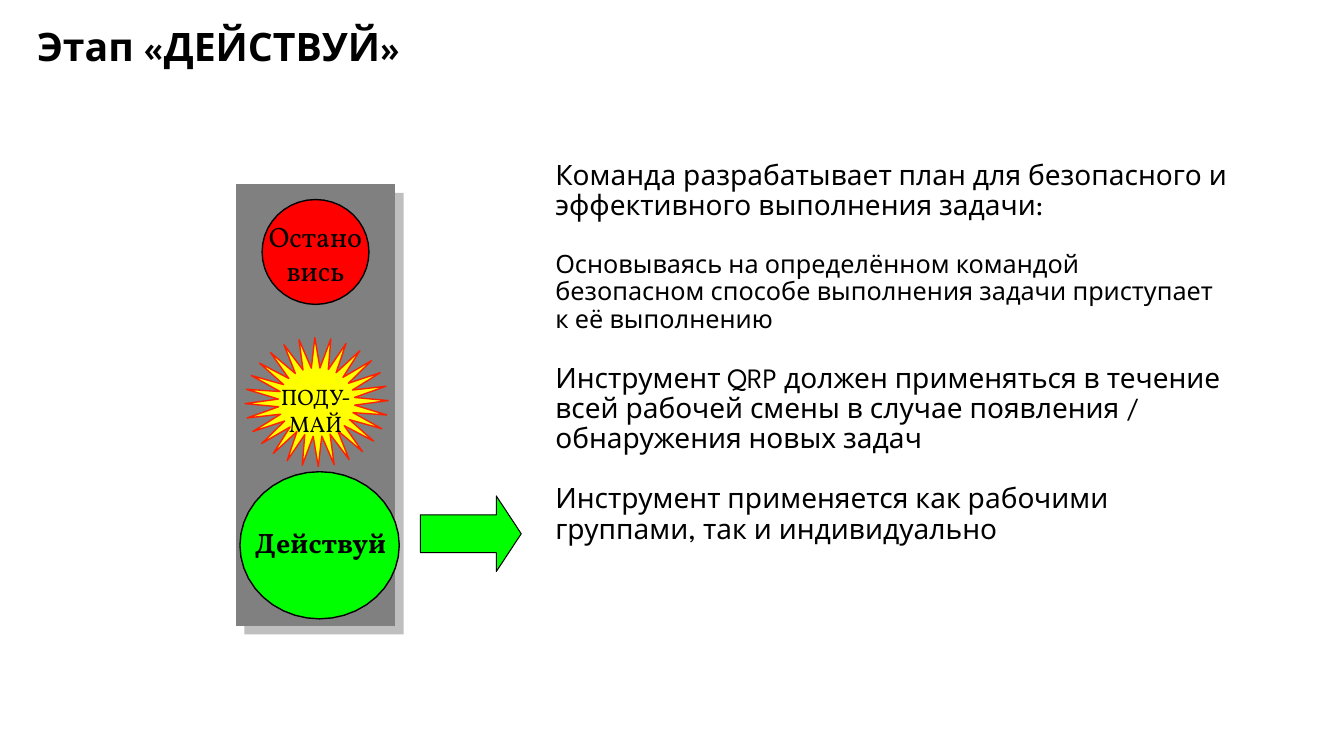
from dataclasses import dataclass
from math import cos, pi, radians, sin

from lxml.etree import SubElement
from pptx import Presentation
from pptx.dml.color import RGBColor
from pptx.enum.shapes import MSO_SHAPE
from pptx.enum.text import MSO_ANCHOR, PP_ALIGN
from pptx.oxml.ns import qn
from pptx.util import Inches, Pt


@dataclass(frozen=True)
class Theme:
    sans: str = "League Spartan"
    serif: str = "Vollkorn"
    black: str = "000000"
    grey: str = "808080"
    red: str = "FF0000"
    yellow: str = "FFFF00"
    green: str = "00FF00"
    flame: str = "FF2000"
    title: int = 28
    body: int = 20
    detail: int = 18
    small: int = 16
    gap: float = 21.6


T = Theme()

BODY = [
    ("Команда разрабатывает план для безопасного и эффективного выполнения задачи:", T.body),
    ("Основываясь на определённом командой безопасном способе выполнения задачи "
     "приступает к её выполнению", T.detail),
    ("Инструмент QRP должен применяться в течение всей рабочей смены "
     "в случае появления / обнаружения новых задач", T.body),
    ("Инструмент применяется как рабочими группами, так и индивидуально", T.body),
]


def style(sp, fill, line=None, width=1):
    sp.shadow.inherit = False
    sp.fill.solid()
    sp.fill.fore_color.rgb = RGBColor.from_string(fill)
    if line:
        sp.line.color.rgb = RGBColor.from_string(line)
        sp.line.width = Pt(width)
    else:
        sp.line.fill.background()


def add_polygon(s, points, fill, line=None):
    pts = [(Inches(x), Inches(y)) for x, y in points]
    builder = s.shapes.build_freeform(*pts[0])
    builder.add_line_segments(pts[1:], close=True)
    sp = builder.convert_to_shape()
    style(sp, fill, line)
    return sp


def ring(cx, cy, radii, count, start=0):
    """Points around a centre, taking the (rx, ry) pairs in turn."""
    points = []
    for i in range(count):
        rx, ry = radii[i % len(radii)]
        angle = radians(start) + 2 * pi * i / count
        points.append((cx + rx * cos(angle), cy + ry * sin(angle)))
    return points


def add_drop_shadow(sp):
    effects = sp._element.spPr.find(qn("a:effectLst"))
    shadow = SubElement(effects, qn("a:outerShdw"), dist=str(Pt(8.5)),
                        dir="2700000", algn="ctr", rotWithShape="0")
    color = SubElement(shadow, qn("a:srgbClr"), val=T.grey)
    SubElement(color, qn("a:alpha"), val="50000")


def add_text(s, box, items, font, bold=False, align=PP_ALIGN.LEFT,
             anchor=MSO_ANCHOR.TOP, spacing=1.0):
    tf = s.shapes.add_textbox(*map(Inches, box)).text_frame
    tf.word_wrap = True
    tf.vertical_anchor = anchor
    for i, (text, size) in enumerate(items):
        p = tf.add_paragraph() if i else tf.paragraphs[0]
        p.text = text
        p.alignment = align
        p.line_spacing = spacing
        if i:
            p.space_before = Pt(T.gap)
        p.font.name = font
        p.font.size = Pt(size)
        p.font.bold = bold
        p.font.color.rgb = RGBColor.from_string(T.black)


def add_traffic_light(s):
    # Housing
    left, top, right, bottom = 2.34, 1.83, 3.92, 6.21
    housing = add_polygon(
        s, [(left, bottom), (right, bottom), (right, top), (left, top)], T.grey)
    add_drop_shadow(housing)

    # Green lamp
    add_polygon(s, ring(3.17, 5.41, [(0.79, 0.73)], 40), T.green, T.black)
    add_text(s, (2.43, 5.16, 1.58, 0.44), [("Действуй", T.body)], T.serif, bold=True)

    # Red lamp
    add_polygon(s, ring(3.13, 2.5, [(0.53, 0.52)], 40), T.red, T.black)
    add_text(s, (2.5, 2.13, 1.26, 0.77), [("Остановись", T.body)], T.serif,
             align=PP_ALIGN.CENTER)

    # Yellow burst with 28 rays
    add_polygon(s, ring(3.14, 3.99, [(0.71, 0.64), (0.38, 0.34)], 56, -52.8),
                T.yellow, T.flame)


def add_arrow(s):
    sp = s.shapes.add_shape(MSO_SHAPE.RIGHT_ARROW, Inches(4.17), Inches(4.92),
                            Inches(1), Inches(0.75))
    sp.adjustments[0] = 0.5
    sp.adjustments[1] = 0.33
    style(sp, T.green, T.black, 0.75)


def main():
    prs = Presentation()
    prs.slide_width, prs.slide_height = Inches(13.33), Inches(7.5)
    s = prs.slides.add_slide(prs.slide_layouts[6])

    # Title and body
    add_text(s, (0.27, 0.09, 12, 0.82), [("Этап «ДЕЙСТВУЙ»", T.title)], T.sans,
             bold=True, anchor=MSO_ANCHOR.MIDDLE, spacing=0.8)
    add_text(s, (5.41, 1.55, 6.86, 5.54), BODY, T.sans, spacing=0.9)

    # Traffic light and pointer
    add_traffic_light(s)
    add_arrow(s)
    add_text(s, (2.6, 3.75, 1.06, 0.64), [("ПОДУ-МАЙ", T.small)], T.serif,
             align=PP_ALIGN.CENTER)

    prs.save("out.pptx")


if __name__ == "__main__":
    main()
